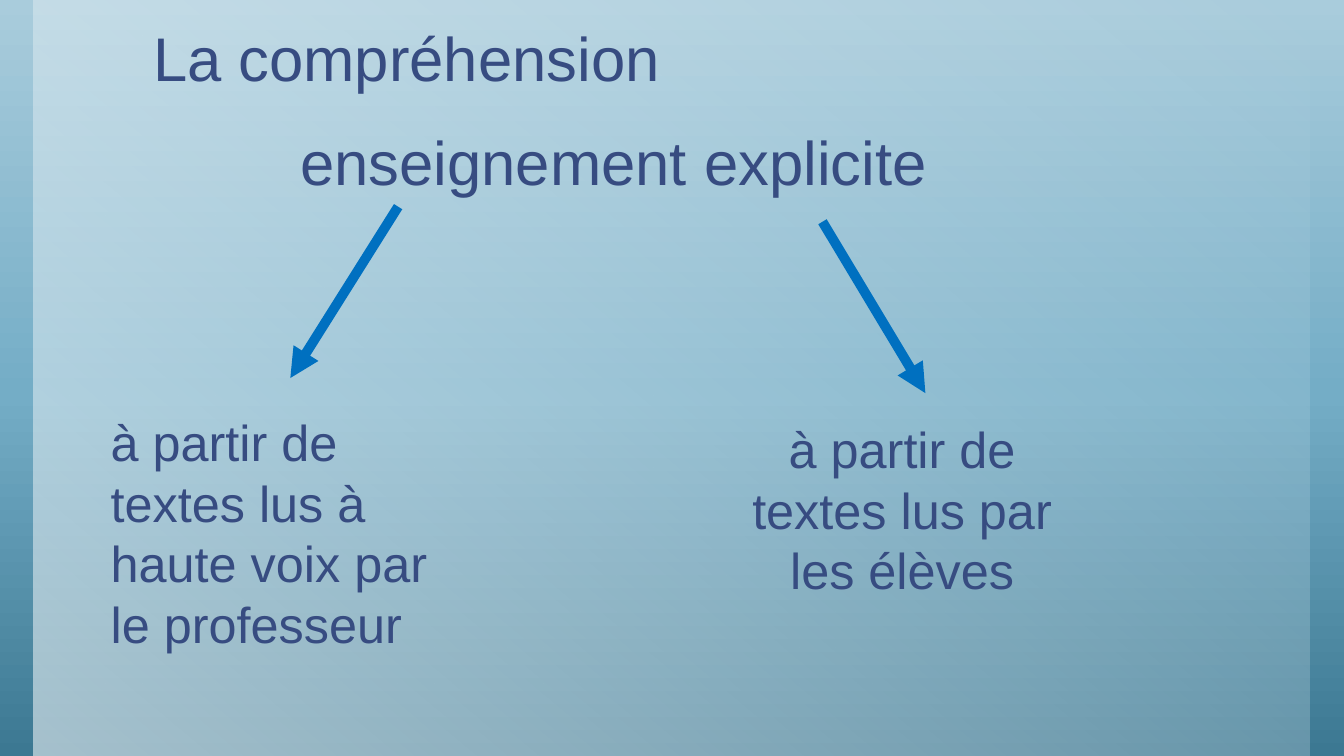
from pptx import Presentation
from pptx.dml.color import RGBColor
from pptx.enum.shapes import MSO_CONNECTOR, MSO_SHAPE
from pptx.enum.text import MSO_ANCHOR, MSO_AUTO_SIZE, PP_ALIGN
from pptx.oxml import parse_xml
from pptx.oxml.ns import nsdecls, qn
from pptx.oxml.xmlchemy import OxmlElement
from pptx.util import Pt

INK = "374C81"
ARROW = "0070C0"


def colour(value):
    return RGBColor.from_string(value)


def apply(target, values):
    for name, value in values.items():
        setattr(target, name, value)


def place(box, left, top, width, height):
    apply(box, {"left": Pt(left), "top": Pt(top), "width": Pt(width), "height": Pt(height)})


def set_gradient(parent, angle, stops):
    marks = "".join(
        f'<a:gs pos="{position * 1000}"><a:srgbClr val="{value}">'
        f'<a:alpha val="{opacity * 1000}"/></a:srgbClr></a:gs>'
        for position, value, opacity in stops
    )
    gradient = parse_xml(
        f'<a:gradFill {nsdecls("a")} rotWithShape="1"><a:gsLst>{marks}</a:gsLst>'
        f'<a:lin ang="{angle * 60000}" scaled="0"/></a:gradFill>'
    )
    parent.replace(parent.find(qn("a:solidFill")), gradient)


def add_background(page):
    page.background.fill.solid()
    properties = page.element.find(".//" + qn("p:bgPr"))
    set_gradient(properties, 270, [(0, "3C7892", 100), (48, "74ADC6", 100), (100, "A9CCDC", 100)])


def add_panel(page):
    panel = page.shapes.add_shape(MSO_SHAPE.RECTANGLE, Pt(23.76), 0, Pt(911.52), Pt(540))
    panel.shadow.inherit = False
    panel.line.fill.background()
    panel.fill.solid()
    set_gradient(panel.element.spPr, 130, [(0, "FFFFFF", 0), (100, "FFFFFF", 55)])


def write(box, text, size, align=PP_ALIGN.LEFT):
    para = box.text_frame.paragraphs[0]
    para.alignment = align
    span = para.add_run()
    span.text = text
    apply(span.font, {"name": "Arial", "size": Pt(size)})
    span.font.color.rgb = colour(INK)
    return para


def add_title(page, text):
    title = page.shapes.title
    place(title, 100, 0, 883.5, 72)
    apply(title.text_frame, {
        "vertical_anchor": MSO_ANCHOR.BOTTOM, "auto_size": MSO_AUTO_SIZE.NONE, "word_wrap": True,
        "margin_left": Pt(9.36), "margin_right": Pt(9.36),
        "margin_top": Pt(5.04), "margin_bottom": Pt(5.04),
    })
    write(title, text, 44).line_spacing = 0.85


def add_text(page, text, bounds, size, align=PP_ALIGN.LEFT):
    box = page.shapes.add_textbox(*(Pt(length) for length in bounds))
    apply(box.text_frame, {"word_wrap": True, "auto_size": MSO_AUTO_SIZE.SHAPE_TO_FIT_TEXT})
    write(box, text, size, align)


def add_arrow(page, *ends):
    arrow = page.shapes.add_connector(MSO_CONNECTOR.STRAIGHT, *(Pt(length) for length in ends))
    arrow.line.color.rgb = colour(ARROW)
    arrow.line.width = Pt(7)
    head = OxmlElement("a:tailEnd")
    head.set("type", "triangle")
    arrow.line._get_or_add_ln().append(head)
    arrow.element.spPr.append(OxmlElement("a:effectLst"))


def main():
    deck = Presentation()
    apply(deck, {"slide_width": Pt(960), "slide_height": Pt(540)})
    page = deck.slides.add_slide(deck.slide_layouts[5])
    add_background(page)
    add_panel(page)
    title = page.shapes.title.element
    title.getparent().append(title)
    add_title(page, "La compréhension")
    add_text(page, "enseignement explicite", (207.36, 85, 555, 60.5), 44)
    add_arrow(page, 284.4, 147.6, 207.4, 270)
    add_arrow(page, 587.5, 158.4, 661, 280.8)
    add_text(page, "à partir de textes lus à haute voix par le professeur",
             (72, 290.2, 254.9, 181.4), 36)
    add_text(page, "à partir de textes lus par les élèves",
             (514.1, 295.2, 260.6, 138.2), 36, PP_ALIGN.CENTER)
    deck.save("out.pptx")


if __name__ == "__main__":
    main()
